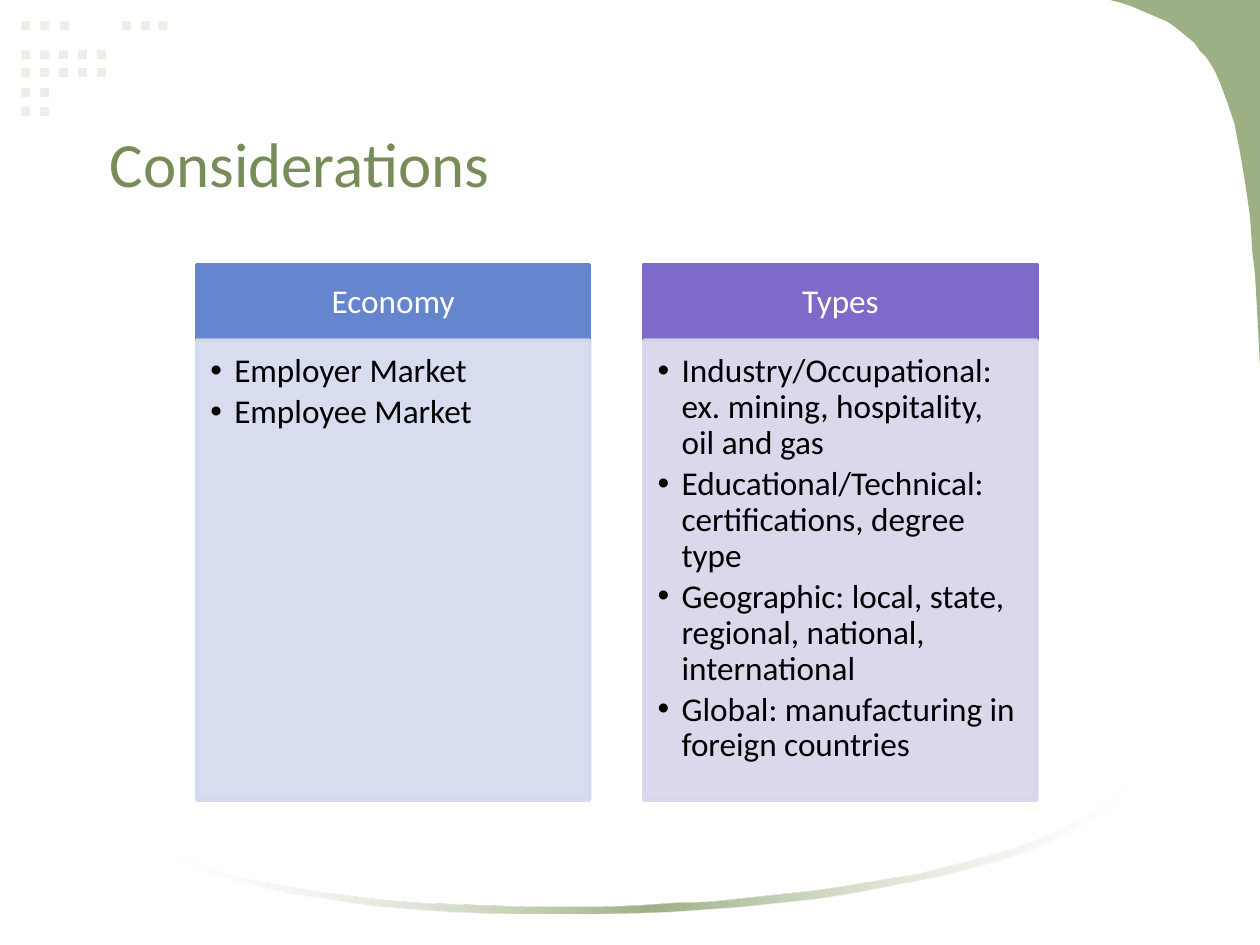
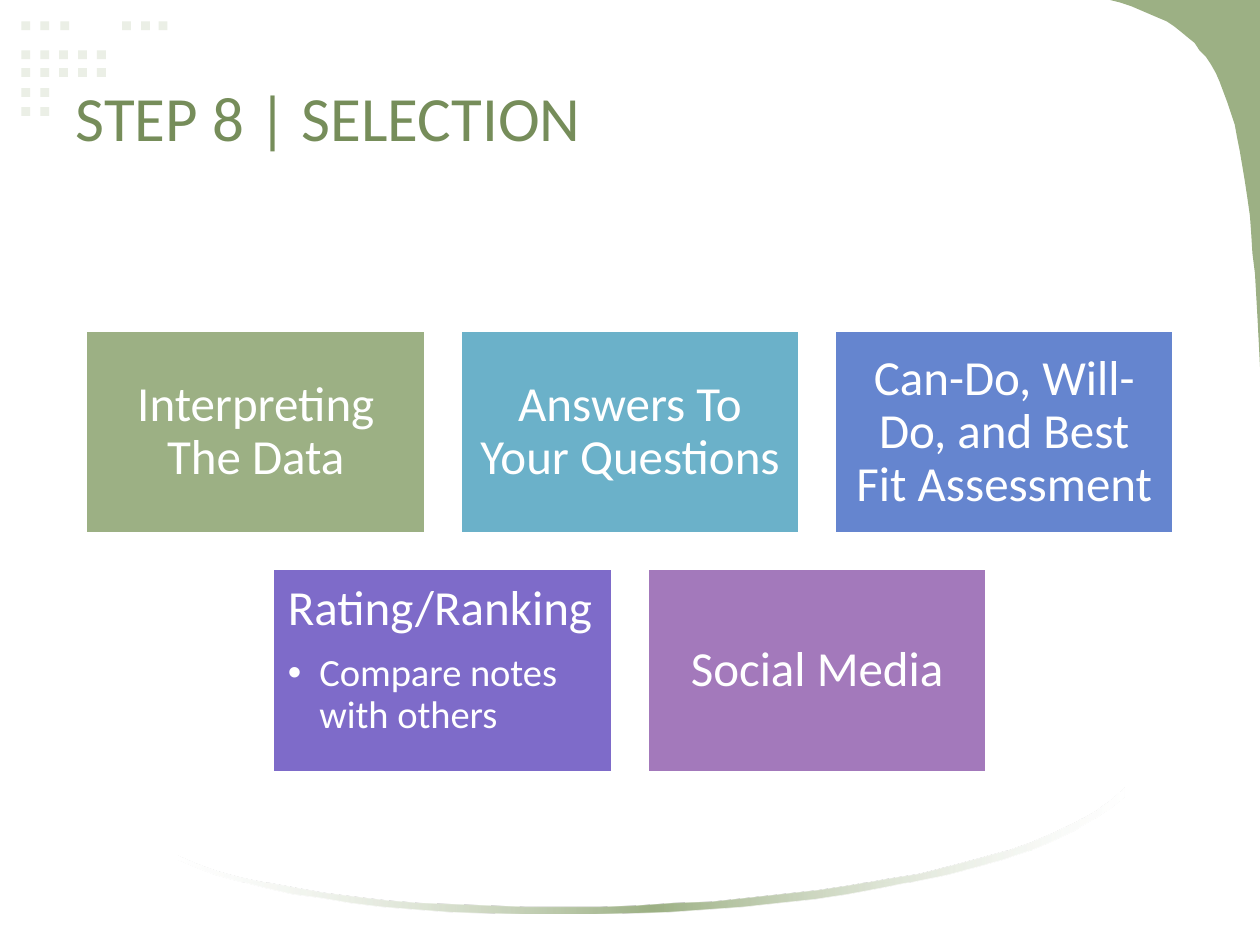
"""Build two recruiting slides with a shared green frame."""
from dataclasses import dataclass

from lxml.etree import SubElement
from pptx import Presentation
from pptx.dml.color import RGBColor
from pptx.enum.shapes import MSO_SHAPE
from pptx.enum.text import MSO_ANCHOR, PP_ALIGN
from pptx.oxml.ns import qn
from pptx.shapes.autoshape import Shape
from pptx.slide import Slide
from pptx.util import Inches, Pt

FONT = "Calibri"
WHITE, BLACK = "FFFFFF", "000000"
GREEN, TITLE_GREEN, DOT_GREEN = "9CB084", "768D5A", "EBEFE6"
TEAL, BLUE, VIOLET, PURPLE = "6BB1C9", "6585CF", "7E6BC9", "A379BB"
PALE_BLUE, PALE_VIOLET = "D3D9ED", "D8D4EB"

DOT_SIZE = 0.07
DOT_ROWS = {
    0.17: (0.17, 0.32, 0.48, 0.97, 1.12, 1.26),
    0.40: (0.17, 0.32, 0.47, 0.62, 0.77),
    0.54: (0.17, 0.32, 0.47, 0.62, 0.77),
    0.70: (0.17, 0.32),
    0.85: (0.17, 0.32),
}
CORNER = [
    (8.81, 0), (10, 0), (10, 2.91), (9.99, 2.71), (9.98, 2.52), (9.97, 2.34),
    (9.96, 2.17), (9.94, 2.01), (9.93, 1.85), (9.92, 1.71), (9.9, 1.57),
    (9.88, 1.44), (9.86, 1.32), (9.84, 1.2), (9.82, 1.1), (9.8, 0.99),
    (9.77, 0.9), (9.74, 0.81), (9.71, 0.73), (9.68, 0.65), (9.65, 0.58),
    (9.61, 0.51), (9.57, 0.45), (9.52, 0.4), (9.48, 0.34), (9.43, 0.3),
    (9.37, 0.25), (9.32, 0.21), (9.26, 0.17), (9.19, 0.14), (9.12, 0.11),
    (9.05, 0.08), (8.98, 0.05), (8.89, 0.02),
]
SWOOSH = [
    (8.92, 6.25), (8.92, 6.32), (8.81, 6.41), (8.67, 6.5), (8.52, 6.59),
    (8.35, 6.67), (8.16, 6.75), (7.95, 6.82), (7.73, 6.88), (7.5, 6.94),
    (7.25, 6.99), (7, 7.04), (6.73, 7.09), (6.46, 7.13), (6.17, 7.16),
    (5.89, 7.19), (5.6, 7.21), (5.31, 7.23), (5.01, 7.24), (4.72, 7.25),
    (4.43, 7.25), (4.14, 7.25), (3.85, 7.24), (3.57, 7.23), (3.3, 7.21),
    (3.04, 7.19), (2.79, 7.16), (2.55, 7.12), (2.32, 7.09), (2.1, 7.04),
    (1.91, 6.99), (1.72, 6.94), (1.56, 6.88), (1.42, 6.82), (1.42, 6.79),
    (1.56, 6.85), (1.73, 6.91), (1.92, 6.96), (2.12, 7), (2.34, 7.04),
    (2.57, 7.08), (2.81, 7.11), (3.07, 7.14), (3.33, 7.16), (3.61, 7.17),
    (3.89, 7.18), (4.17, 7.19), (4.46, 7.19), (4.76, 7.19), (5.05, 7.18),
    (5.34, 7.16), (5.64, 7.15), (5.93, 7.12), (6.21, 7.09), (6.49, 7.06),
    (6.76, 7.02), (7.03, 6.97), (7.29, 6.93), (7.53, 6.87), (7.76, 6.81),
    (7.98, 6.75), (8.18, 6.68), (8.37, 6.6), (8.54, 6.52), (8.68, 6.44),
    (8.81, 6.35),
]
SWOOSH_STOPS = [(0, WHITE, 30), (50, GREEN, 100), (100, WHITE, 30)]


@dataclass
class Box:
    """Position and size in inches."""
    left: float
    top: float
    width: float
    height: float

    def lengths(self) -> list[int]:
        """Return left, top, width and height as lengths."""
        return [Inches(v) for v in (self.left, self.top, self.width, self.height)]


@dataclass
class Line:
    """One paragraph; an indent makes it a bullet."""
    text: str
    size: float
    color: str = WHITE
    centered: bool = True
    indent: float = 0


@dataclass
class ListCard:
    """A headed list of points."""
    heading: str
    color: str
    body_color: str
    points: list[str]


@dataclass
class Tile:
    """A coloured tile, with an optional bullet below its label."""
    label: str
    color: str
    bullet: str = ""


LIST_CARDS = [
    ListCard("Economy", BLUE, PALE_BLUE, ["Employer Market", "Employee Market"]),
    ListCard("Types", VIOLET, PALE_VIOLET, [
        "Industry/Occupational: ex. mining, hospitality, oil and gas",
        "Educational/Technical: certifications, degree type",
        "Geographic: local, state, regional, national, international",
        "Global: manufacturing in foreign countries",
    ]),
]
TILE_ROWS = [
    [Tile("Interpreting The Data", GREEN),
     Tile("Answers To Your Questions", TEAL),
     Tile("Can-Do, Will-Do, and Best Fit Assessment", BLUE)],
    [Tile("Rating/Ranking", VIOLET, "Compare notes with others"),
     Tile("Social Media", PURPLE)],
]


def rgb(color: str) -> RGBColor:
    """Turn a hex string into a colour."""
    return RGBColor.from_string(color)


def apply(target: object, formats: dict) -> None:
    """Set each named attribute on the target."""
    for name, value in formats.items():
        setattr(target, name, value)


def paint(shape: Shape, fill: str, line: str = "", opacity: int = 100) -> None:
    """Fill and outline a shape without a shadow."""
    shape.shadow.inherit = False
    shape.fill.solid()
    shape.fill.fore_color.rgb = rgb(fill)
    if line:
        shape.line.color.rgb = rgb(line)
        shape.line.width = Pt(2)
    else:
        shape.line.fill.background()
    if opacity < 100:
        for color in list(shape.element.spPr.iter(qn("a:srgbClr"))):
            SubElement(color, qn("a:alpha"), val=str(opacity * 1000))


def add_rectangle(slide: Slide, box: Box, fill: str, line: str = "",
                  opacity: int = 100) -> Shape:
    """Add a painted rectangle."""
    shape = slide.shapes.add_shape(MSO_SHAPE.RECTANGLE, *box.lengths())
    paint(shape, fill, line, opacity)
    return shape


def add_outline(slide: Slide, points: list[tuple[float, float]]) -> Shape:
    """Add a closed green outline through points in inches."""
    corners = [(Inches(x), Inches(y)) for x, y in points]
    builder = slide.shapes.build_freeform(*corners[0])
    builder.add_line_segments(corners[1:], close=True)
    shape = builder.convert_to_shape()
    paint(shape, GREEN)
    return shape


def fade(shape: Shape, stops: list[tuple[int, str, int]]) -> None:
    """Give a shape a horizontal gradient with opacity at each stop."""
    shape.fill.gradient()
    shape.fill.gradient_angle = 0
    stop_list = next(shape.element.spPr.iter(qn("a:gsLst")))
    for stop in list(stop_list):
        stop_list.remove(stop)
    for position, color, opacity in stops:
        stop = SubElement(stop_list, qn("a:gs"), pos=str(position * 1000))
        value = SubElement(stop, qn("a:srgbClr"), val=color)
        SubElement(value, qn("a:alpha"), val=str(opacity * 1000))


def write(shape: Shape, lines: list[Line], insets: tuple[float, float, float, float],
          anchor: MSO_ANCHOR = MSO_ANCHOR.MIDDLE) -> None:
    """Write paragraphs into a shape; insets run left, top, right, bottom."""
    frame = shape.text_frame
    sides = ("margin_left", "margin_top", "margin_right", "margin_bottom")
    apply(frame, {"word_wrap": True, "vertical_anchor": anchor,
                  **{side: Inches(inset) for side, inset in zip(sides, insets)}})
    for number, line in enumerate(lines):
        paragraph = frame.add_paragraph() if number else frame.paragraphs[0]
        spacing = 0.15 if line.indent else 0.35
        apply(paragraph, {
            "text": line.text,
            "alignment": PP_ALIGN.CENTER if line.centered else PP_ALIGN.LEFT,
            "line_spacing": 0.9,
            "space_after": Pt(line.size * spacing),
        })
        apply(paragraph.font, {"name": FONT, "size": Pt(line.size)})
        paragraph.font.color.rgb = rgb(line.color)
        if line.indent:
            properties = paragraph._p.get_or_add_pPr()
            properties.set("marL", str(Inches(line.indent)))
            properties.set("indent", str(-Inches(line.indent)))
            SubElement(properties, qn("a:buFont"), typeface="Arial")
            SubElement(properties, qn("a:buChar"), char="•")


def add_framed_slide(presentation: Presentation, title: str, box: Box) -> Slide:
    """Add a slide with the dots, corner, swoosh and title."""
    slide = presentation.slides.add_slide(presentation.slide_layouts[5])
    for top, lefts in DOT_ROWS.items():
        for left in lefts:
            add_rectangle(slide, Box(left, top, DOT_SIZE, DOT_SIZE), DOT_GREEN)
    add_outline(slide, CORNER)
    fade(add_outline(slide, SWOOSH), SWOOSH_STOPS)
    heading = slide.shapes.title
    apply(heading, dict(zip(("left", "top", "width", "height"), box.lengths())))
    heading.text_frame.vertical_anchor = MSO_ANCHOR.MIDDLE
    paragraph = heading.text_frame.paragraphs[0]
    apply(paragraph, {"text": title, "alignment": PP_ALIGN.LEFT})
    apply(paragraph.font, {"name": FONT, "size": Pt(36)})
    paragraph.font.color.rgb = rgb(TITLE_GREEN)
    return slide


def add_list_card(slide: Slide, card: ListCard, left: float) -> None:
    """Draw a heading bar with its list below."""
    header = add_rectangle(slide, Box(left, 2.1, 3.12, 0.6), card.color, card.color)
    write(header, [Line(card.heading, 19)], (0.15, 0.08, 0.15, 0.08))
    body = add_rectangle(slide, Box(left, 2.7, 3.12, 3.65),
                         card.body_color, card.body_color, 90)
    points = [Line(point, 19, BLACK, False, 0.19) for point in card.points]
    write(body, points, (0.11, 0.11, 0.15, 0.17), MSO_ANCHOR.TOP)


def add_tile_rows(slide: Slide, rows: list[list[Tile]]) -> None:
    """Draw rows of tiles, each row centred on the slide."""
    width, height, gap = 2.7, 1.62, 0.27
    for row, tiles in enumerate(rows):
        start = (10 - len(tiles) * (width + gap) + gap) / 2
        for column, tile in enumerate(tiles):
            box = Box(start + column * (width + gap), 2.62 + row * (height + gap),
                      width, height)
            shape = add_rectangle(slide, box, tile.color, WHITE)
            lines = [Line(tile.label, 28, centered=not tile.bullet)]
            if tile.bullet:
                lines.append(Line(tile.bullet, 22, centered=False, indent=0.25))
            anchor = MSO_ANCHOR.TOP if tile.bullet else MSO_ANCHOR.MIDDLE
            write(shape, lines, (0.12,) * 4, anchor)


def main() -> None:
    """Build and save the presentation."""
    presentation = Presentation()
    apply(presentation, {"slide_width": Inches(10), "slide_height": Inches(7.5)})
    considerations = add_framed_slide(presentation, "Considerations",
                                      Box(0.77, 0.56, 8.81, 1.45))
    for column, card in enumerate(LIST_CARDS):
        add_list_card(considerations, card, 1.56 + column * 3.55)
    selection = add_framed_slide(presentation, "STEP 8 | SELECTION",
                                 Box(0.5, 0.3, 9, 1.25))
    add_tile_rows(selection, TILE_ROWS)
    presentation.save("out.pptx")


if __name__ == "__main__":
    main()
